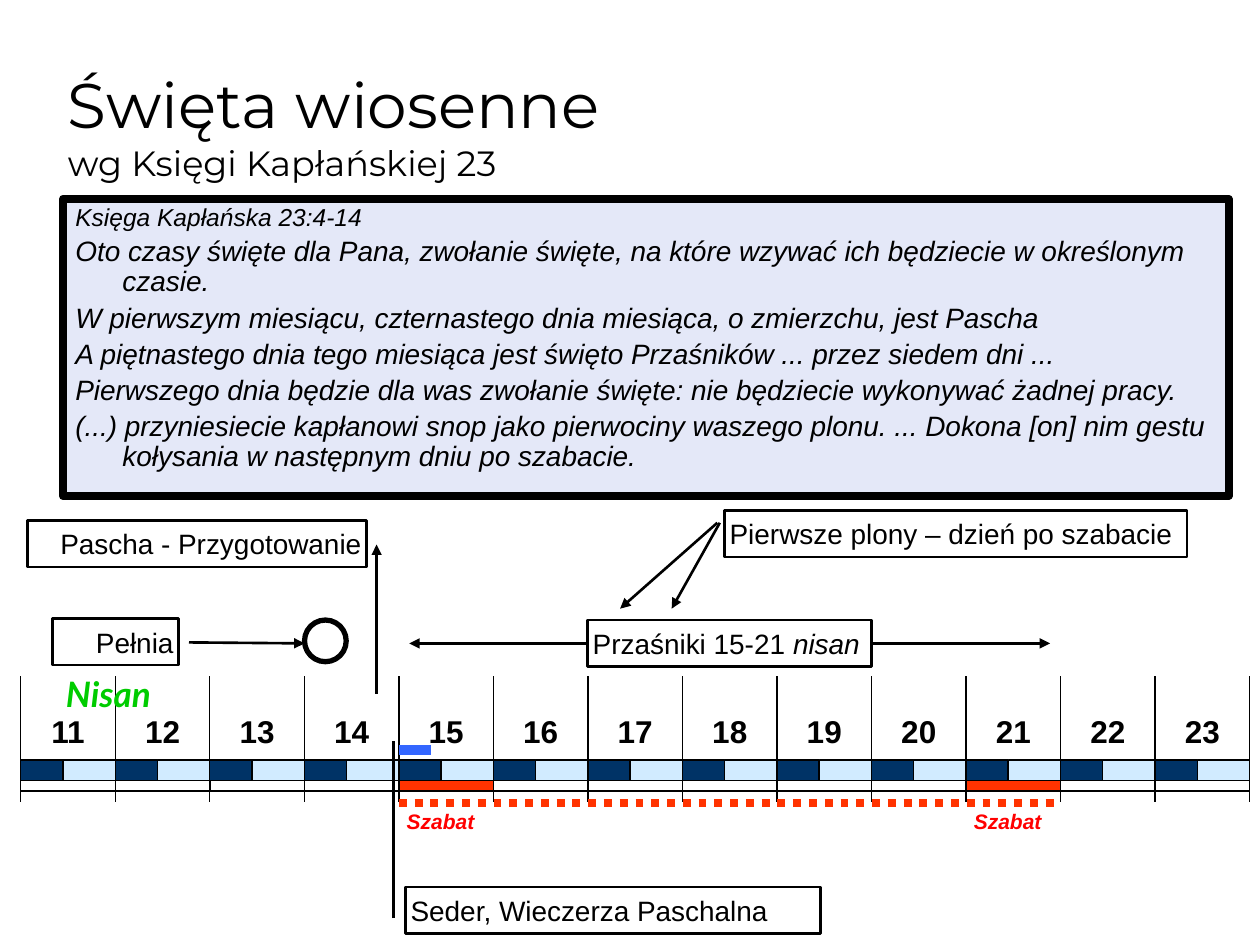
from lxml import etree
from pptx import Presentation
from pptx import util as u
from pptx.dml.color import RGBColor
from pptx.enum import dml, shapes, text
from pptx.oxml import ns

BLACK = RGBColor(0x00, 0x00, 0x00)
WHITE = RGBColor(0xFF, 0xFF, 0xFF)
PALE = RGBColor(0xE4, 0xE8, 0xF8)
NIGHT = RGBColor(0x00, 0x33, 0x66)
LIGHT = RGBColor(0xD1, 0xEB, 0xFF)
ORANGE = RGBColor(0xFF, 0x33, 0x00)
RED = RGBColor(0xFF, 0x00, 0x00)
GREEN = RGBColor(0x00, 0xCC, 0x00)
BLUE = RGBColor(0x33, 0x66, 0xFF)

KIND = shapes.MSO_SHAPE
LEFT, MID, RIGHT = text.PP_ALIGN.LEFT, text.PP_ALIGN.CENTER, text.PP_ALIGN.RIGHT
TOP, CENTER, BOTTOM = text.MSO_ANCHOR.TOP, text.MSO_ANCHOR.MIDDLE, text.MSO_ANCHOR.BOTTOM

VERSES = [
    "Oto czasy święte dla Pana, zwołanie święte, na które wzywać ich będziecie w określonym czasie.",
    "W pierwszym miesiącu, czternastego dnia miesiąca, o zmierzchu, jest Pascha",
    "A piętnastego dnia tego miesiąca jest święto Przaśników ... przez siedem dni ...",
    "Pierwszego dnia będzie dla was zwołanie święte: nie będziecie wykonywać żadnej pracy.",
    "(...) przyniesiecie kapłanowi snop jako pierwociny waszego plonu. ... Dokona [on] nim gestu "
    "kołysania w następnym dniu po szabacie.",
]
DAYS = range(11, 24)
SABBATHS = (15, 21)


def cm(box):
    return [u.Cm(n) for n in box]


def add_run(para, words, size, color=BLACK, face="Arial", bold=False, italic=False):
    run = para.add_run()
    run.text = words
    font = run.font
    font.size, font.name = u.Pt(size), face
    font.bold, font.italic = bold, italic
    font.color.rgb = color


def add_form(parts, kind, box, fill=None, width=0.75):
    form = parts.add_shape(kind, *cm(box))
    form.shadow.inherit = False
    if fill is None:
        form.fill.background()
    else:
        form.fill.solid()
        form.fill.fore_color.rgb = fill
    form.line.color.rgb = BLACK
    form.line.width = u.Pt(width)
    return form


def set_frame(form, align=LEFT, anchor=TOP, inset=None):
    frame = form.text_frame
    frame.word_wrap = True
    frame.vertical_anchor = anchor
    if inset is not None:
        frame.margin_left = frame.margin_right = u.Cm(inset)
        frame.margin_top = frame.margin_bottom = u.Cm(inset)
    para = frame.paragraphs[0]
    para.alignment = align
    return para


def add_text(parts, box, align=LEFT, anchor=TOP, inset=None):
    return set_frame(parts.add_textbox(*cm(box)), align, anchor, inset)


def add_head(line):
    etree.SubElement(line.line._get_or_add_ln(), ns.qn("a:headEnd"), type="triangle")


def add_line(parts, start, end, color=BLACK, width=1.5, head=False):
    line = parts.add_connector(shapes.MSO_CONNECTOR.STRAIGHT, *cm(start + end))
    line.line.color.rgb = color
    line.line.width = u.Pt(width)
    if head:
        add_head(line)
    etree.SubElement(line._element.spPr, ns.qn("a:effectLst"))
    return line


def add_label(parts, box, words, align=LEFT, kind=KIND.RECTANGLE):
    form = add_form(parts, kind, box, width=1.5)
    para = set_frame(form, align, CENTER, 0.1)
    add_run(para, words, 16)
    return form


def add_title(parts, box):
    para = add_text(parts, box, anchor=BOTTOM)
    add_run(para, "Święta wiosenne", 36, face="Montserrat")
    para.add_line_break()
    add_run(para, "wg Księgi Kapłańskiej 23", 20, face="Montserrat")


def add_verses(parts, box):
    form = add_form(parts, KIND.RECTANGLE, box, PALE, 4.5)
    para = set_frame(form)
    add_run(para, "Księga Kapłańska 23:4-14", 14, italic=True)
    for verse in VERSES:
        para = form.text_frame.add_paragraph()
        para.alignment = LEFT
        para.space_before = u.Pt(3.4)
        add_run(para, verse, 16, italic=True)
    for para in form.text_frame.paragraphs:
        para.line_spacing = 0.9
        props = para._p.get_or_add_pPr()
        props.set("marL", str(u.Cm(0.95)))
        props.set("indent", str(-u.Cm(0.95)))


def add_day(parts, box, day):
    x, y, w, h = box
    night = 0.85
    pair = parts.add_group_shape().shapes
    add_form(pair, KIND.RECTANGLE, (x, y + 1.7, night, 0.42), NIGHT)
    add_form(pair, KIND.RECTANGLE, (x + night, y + 1.7, w - night, 0.42), LIGHT)
    para = add_text(parts, (x, y + 0.42, w, 2.12), MID, inset=0)
    para.space_before = u.Pt(0)
    parts[-1].text_frame.margin_top = u.Cm(0.32)
    add_run(para, str(day), 18, bold=True)
    rest = day in SABBATHS
    add_form(parts, KIND.RECTANGLE, (x, y + 2.12, w, 0.21), ORANGE if rest else None)
    if rest:
        para = add_text(parts, (x - 0.53, y + 2.62, 2.74, 0.71), MID)
        para.line_spacing = 0.9
        add_run(para, "Szabat", 12, RED, bold=True, italic=True)


def add_month(parts, box):
    x, y, w, h = box
    step = w / len(DAYS)
    for i, day in enumerate(DAYS):
        add_day(parts, (x + i * step, y, step, h), day)
    for i in range(len(DAYS) + 1):
        add_line(parts, (x + i * step, y + h), (x + i * step, y), width=0.75)
    first, last = (x + step * DAYS.index(day) for day in SABBATHS)
    week = add_line(parts, (first, y + 2.57), (last + step, y + 2.57), ORANGE, 4.5)
    week.line.dash_style = dml.MSO_LINE.ROUND_DOT
    add_line(parts, (first, y + 1.5), (first + 0.64, y + 1.5), BLUE, 6)
    para = add_text(parts, (x + 0.14, y - 0.18, 3.25, 1.09), MID)
    add_run(para, "Nisan", 20, GREEN, "Lato", True, True)


def add_crops(parts, box):
    x, y, w, h = box
    add_label(parts, box, "Pierwsze plony – dzień po szabacie")
    for tip, tail in ((2.11, 0.15), (1.07, 0.1)):
        add_line(parts, (x - tip, y + 1.98), (x - tail, y + 0.25), head=True)


def add_feast(parts, box):
    x, y, w, h = box
    label = add_label(parts, box, "Przaśniki 15-21 ")
    add_run(label.text_frame.paragraphs[0], "nisan", 16, italic=True)
    mid = y + h / 2
    for tip, edge, site in ((x - 3.6, x, 1), (x + w + 3.6, x + w, 3)):
        arm = add_line(parts, (tip, mid), (edge, mid), head=True)
        arm.end_connect(label, site)


def add_moon(parts, box):
    x, y, w, h = box
    add_label(parts, box, "Pełnia", RIGHT)
    add_line(parts, (x + 5.08, y + 0.5), (x + 2.75, y + 0.48), head=True)
    add_form(parts, KIND.OVAL, (x + 5.08, y + 0.03, 0.84, 0.84), WHITE, 3)


def add_call(parts, box, words, align, points, head=False):
    form = add_label(parts, box, words, align, KIND.LINE_CALLOUT_1)
    form._element.spPr.xfrm.set("flipH", "1")
    for i, point in enumerate(points):
        form.adjustments[i] = point
    if head:
        add_head(form)


def main():
    deck = Presentation()
    deck.slide_width, deck.slide_height = u.Cm(25.4), u.Cm(19.05)
    parts = deck.slides.add_slide(deck.slide_layouts[6]).shapes
    add_verses(parts, (1.27, 4.01, 23.5, 5.99))
    add_title(parts, (1.12, 0.64, 22.86, 3.18))
    add_month(parts, (0.42, 13.62, 24.77, 2.54))
    add_crops(parts, (14.61, 10.29, 9.32, 0.94))
    add_feast(parts, (11.85, 12.5, 5.72, 0.94))
    add_moon(parts, (1.06, 12.47, 2.54, 0.94))
    add_call(parts, (8.18, 17.88, 8.36, 0.94), "Seder, Wieczerza Paschalna", LEFT,
             (0.67, 1.03, -3.14, 1.03))
    add_call(parts, (0.56, 10.49, 6.83, 0.94), "Pascha - Przygotowanie", RIGHT,
             (0.52, -0.03, 3.73, -0.03), True)
    deck.save("out.pptx")


if __name__ == "__main__":
    main()
